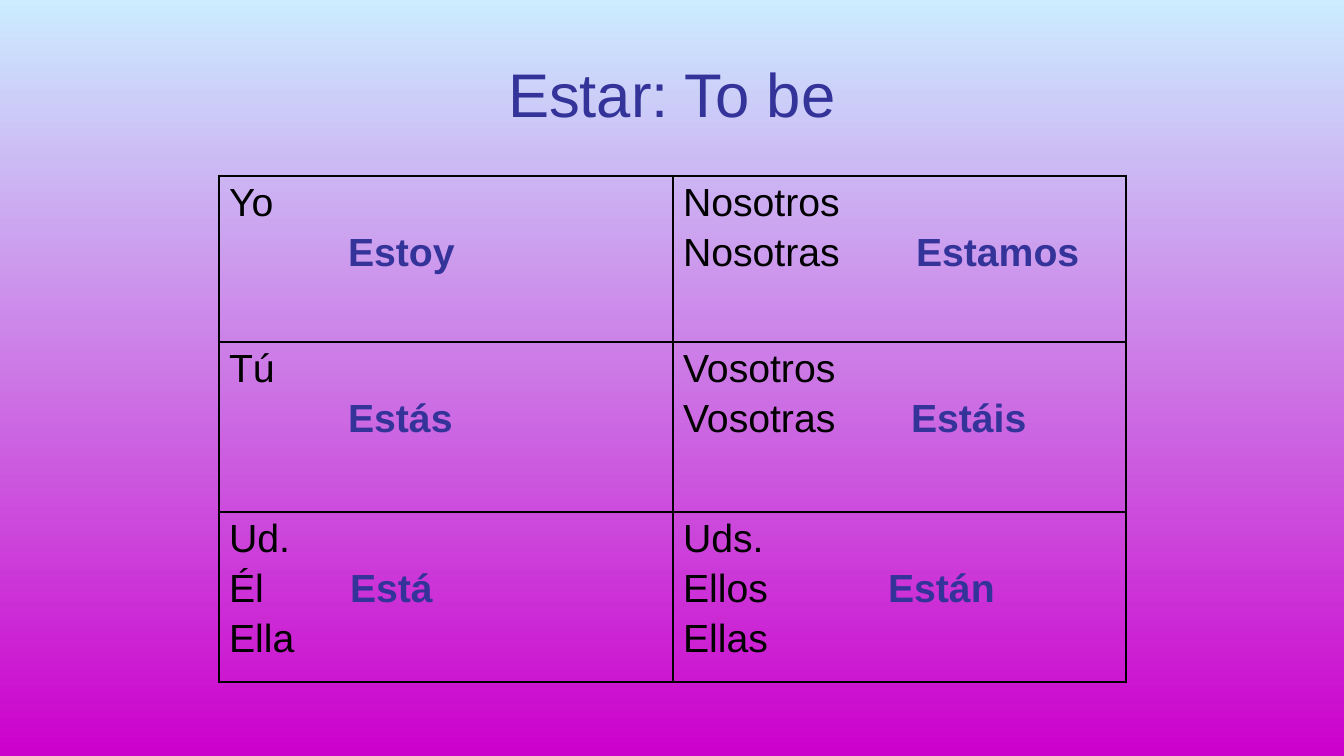
from lxml import etree
from pptx import Presentation
from pptx.dml.color import RGBColor
from pptx.enum import text
from pptx.oxml import ns
from pptx.util import Pt

TITLE = "Estar: To be"
FONT, BLUE, BLACK = "Arial", "333399", "000000"
SKY, PINK = "CCECFF", "CC00CC"
SIZE = (1344, 756)
HEAD = (67, 30, 1210, 126)
GRID = (219, 176)
COLS = (454, 453)
ROWS = (166, 170, 170)
# Each cell: pronouns, verb on the second line, tab stop of the verb
CELLS = [
    [(["Yo", ""], "Estoy", 119), (["Nosotros", "Nosotras"], "Estamos", 233)],
    [(["Tú", ""], "Estás", 119), (["Vosotros", "Vosotras"], "Estáis", 228)],
    [(["Ud.", "Él", "Ella"], "Está", 121),
     (["Uds.", "Ellos", "Ellas"], "Están", 205)],
]


def px(n):
    """Turn pixels into EMU."""
    return round(n * 914400 / 100.8)


def rgb(code):
    """Turn a hex string into a colour."""
    return RGBColor.from_string(code)


def write(para, words, size, color, bold=False):
    """Add a styled run to a paragraph."""
    run = para.add_run()
    run.text = words
    font = run.font
    font.name, font.size, font.bold = FONT, Pt(size), bold
    font.color.rgb = rgb(color)


def tab(para, pos):
    """Give a paragraph one left tab stop."""
    stops = etree.SubElement(para._p.get_or_add_pPr(), ns.qn("a:tabLst"))
    etree.SubElement(stops, ns.qn("a:tab"), pos=str(px(pos)), algn="l")


def border(cell, row, col):
    """Draw thick outer and thin inner cell borders."""
    outer = {"L": col == 0, "R": col == len(COLS) - 1,
             "T": row == 0, "B": row == len(ROWS) - 1}
    for side, thick in outer.items():
        line = etree.SubElement(cell._tc.get_or_add_tcPr(),
                                ns.qn("a:ln" + side),
                                w=str(Pt(2.25 if thick else 1)))
        fill = etree.SubElement(line, ns.qn("a:solidFill"))
        etree.SubElement(fill, ns.qn("a:srgbClr"), val=BLACK)


def fill_cell(cell, lines, verb, pos):
    """Write the pronouns and the verb form of one cell."""
    frame = cell.text_frame
    for i, word in enumerate(lines):
        para = frame.add_paragraph() if i else frame.paragraphs[0]
        if i:
            para.space_before = Pt(4.6)
        if i == 1:
            tab(para, pos)
            write(para, word + "\t", 28, BLACK)
            write(para, verb, 28, BLUE, True)
        else:
            write(para, word, 28, BLACK)


def main():
    """Build the slide."""
    deck = Presentation()
    deck.slide_width, deck.slide_height = map(px, SIZE)
    slide = deck.slides.add_slide(deck.slide_layouts[5])
    back = slide.background.fill
    back.gradient()
    back.gradient_angle = 270
    for stop, code in zip(back.gradient_stops, (SKY, PINK)):
        stop.color.rgb = rgb(code)

    title = slide.shapes.title
    title.left, title.top, title.width, title.height = map(px, HEAD)
    title.text_frame.vertical_anchor = text.MSO_ANCHOR.MIDDLE
    para = title.text_frame.paragraphs[0]
    para.alignment = text.PP_ALIGN.CENTER
    write(para, TITLE, 44, BLUE)

    box = map(px, (*GRID, sum(COLS), sum(ROWS)))
    table = slide.shapes.add_table(len(ROWS), len(COLS), *box).table
    table.first_row = table.horz_banding = False
    for col, width in zip(table.columns, COLS):
        col.width = px(width)
    for row, height in zip(table.rows, ROWS):
        row.height = px(height)
    for r, line in enumerate(CELLS):
        for c, data in enumerate(line):
            cell = table.cell(r, c)
            border(cell, r, c)
            cell.fill.background()
            fill_cell(cell, *data)
    deck.save("out.pptx")


if __name__ == "__main__":
    main()
